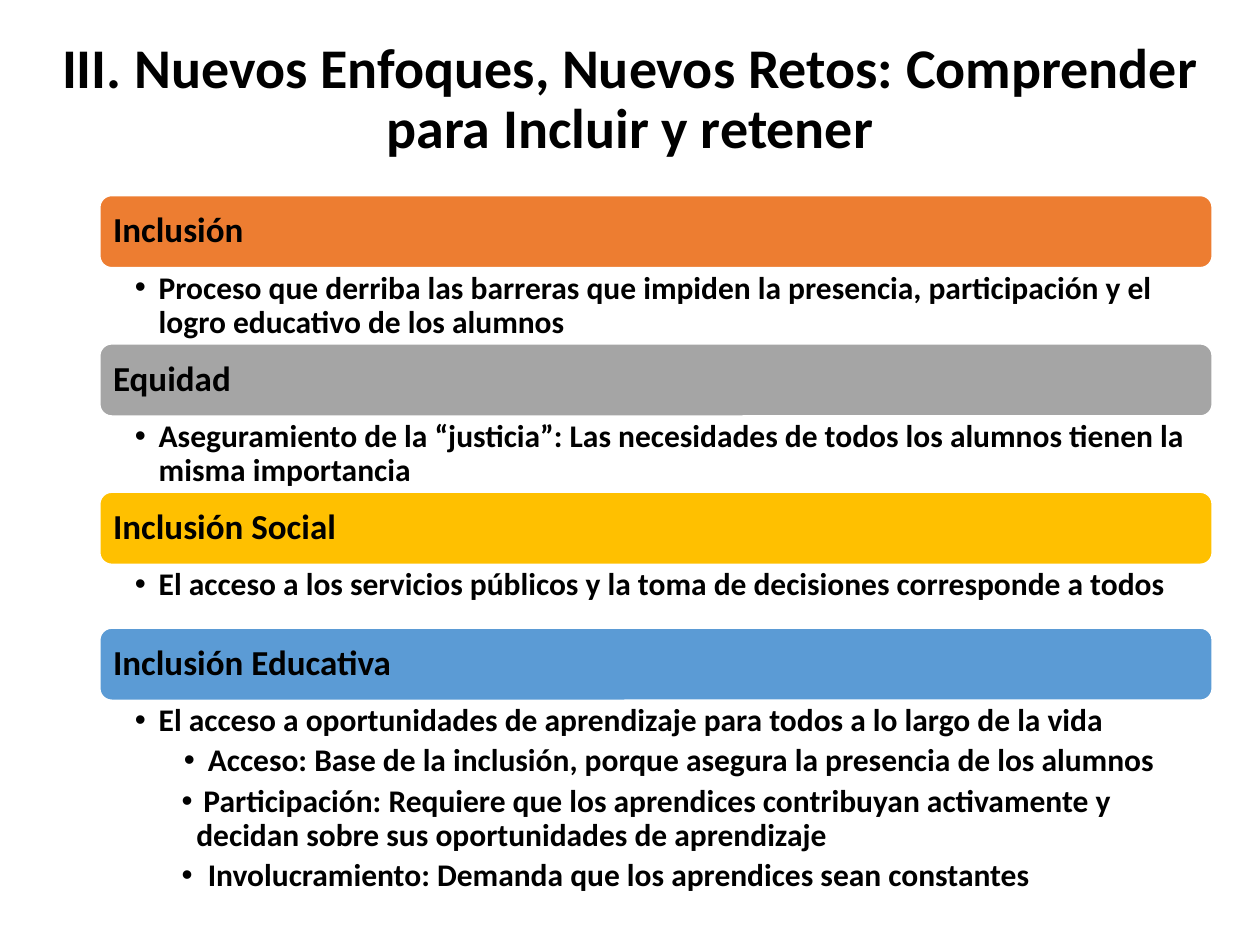
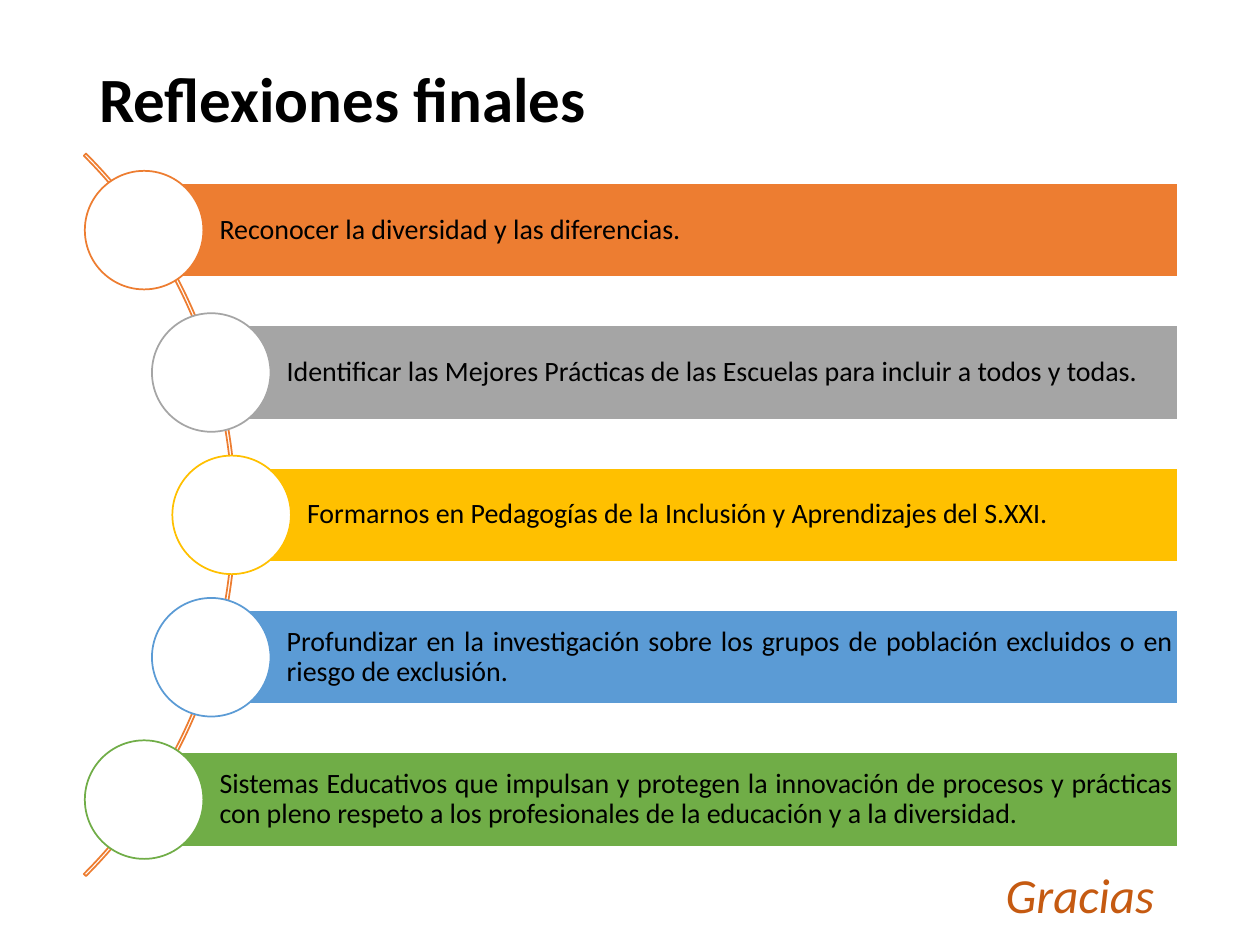
from dataclasses import dataclass
from math import sqrt

from lxml.etree import SubElement
from pptx import Presentation
from pptx.dml.color import RGBColor
from pptx.enum.shapes import MSO_SHAPE as Preset
from pptx.enum.text import MSO_ANCHOR as Anchor, PP_ALIGN as Align
from pptx.oxml.ns import qn
from pptx.shapes.autoshape import Shape
from pptx.slide import Slide
from pptx.util import Cm, Pt

FONT = "Calibri"
COLORS = {
    "black": "000000", "white": "FFFFFF", "orange": "ED7D31", "gray": "A5A5A5",
    "gold": "FFC000", "blue": "5B9BD5", "green": "70AD47", "rust": "C55A11",
}


@dataclass(frozen=True)
class Box:
    left: float
    top: float
    width: float
    height: float

    def lengths(self) -> tuple:
        return Cm(self.left), Cm(self.top), Cm(self.width), Cm(self.height)


@dataclass(frozen=True)
class TextStyle:
    size: float
    bold: bool = False
    italic: bool = False
    color: str = "black"
    align: Align = Align.LEFT
    anchor: Anchor = Anchor.MIDDLE
    insets: tuple = (0.25, 0.13, 0.25, 0.13)  # left, top, right, bottom
    line_spacing: float = 0.9
    space_after: float = 0


@dataclass(frozen=True)
class Point:
    text: str
    level: int = 1
    margin: float = 0.48
    hanging: float = 0.48


@dataclass(frozen=True)
class Concept:
    name: str
    color: str
    body_height: float
    points: tuple


@dataclass(frozen=True)
class Reflection:
    text: str
    color: str


# Text styles
CONCEPT_NAME = TextStyle(20, bold=True, insets=(0.2,) * 4)
CONCEPT_BODY = TextStyle(18, bold=True, anchor=Anchor.TOP, space_after=3.6,
                         insets=(0.71, 0.08, 0.36, 0.08))
REFLECTION = TextStyle(16, align=Align.JUSTIFY, insets=(1.52, 0.1, 0.1, 0.1))
THANKS = TextStyle(28, italic=True, color="rust", align=Align.CENTER,
                   anchor=Anchor.TOP, line_spacing=1.0)

# Content
CONCEPTS = (
    Concept("Inclusión", "orange", 1.53, (
        Point("Proceso que derriba las barreras que impiden la presencia, "
              "participación y el logro educativo de los alumnos"),)),
    Concept("Equidad", "gray", 1.53, (
        Point("Aseguramiento de la “justicia”: Las necesidades de todos los "
              "alumnos tienen la misma importancia"),)),
    Concept("Inclusión Social", "gold", 1.28, (
        Point("El acceso a los servicios públicos y la toma de decisiones "
              "corresponde a todos"),)),
    Concept("Inclusión Educativa", "blue", 4.11, (
        Point("El acceso a oportunidades de aprendizaje para todos a lo largo de la vida"),
        Point("Acceso: Base de la inclusión, porque asegura la presencia de los alumnos",
              2, 1.47, 0.48),
        Point(" Participación: Requiere que los aprendices contribuyan activamente y "
              "decidan sobre sus oportunidades de aprendizaje", 2, 1.24, 0.3),
        Point("Involucramiento: Demanda que los aprendices sean constantes",
              2, 1.47, 0.53))),
)
REFLECTIONS = (
    Reflection("Reconocer la diversidad y las diferencias.", "orange"),
    Reflection("Identificar las Mejores Prácticas de las Escuelas para incluir "
               "a todos y todas.", "gray"),
    Reflection("Formarnos en Pedagogías de la Inclusión y Aprendizajes del S.XXI.", "gold"),
    Reflection("Profundizar en la investigación sobre los grupos de población "
               "excluidos o en riesgo de exclusión.", "blue"),
    Reflection("Sistemas Educativos que impulsan y protegen la innovación de procesos "
               "y prácticas con pleno respeto a los profesionales de la educación y a "
               "la diversidad.", "green"),
)


def rgb(name: str) -> RGBColor:
    return RGBColor.from_string(COLORS[name])


def add_bullet(paragraph, point: Point) -> None:
    paragraph.level = point.level
    properties = paragraph._p.get_or_add_pPr()
    for key, value in {"marL": Cm(point.margin), "indent": -Cm(point.hanging)}.items():
        properties.set(key, str(int(value)))
    SubElement(properties, qn("a:buFont")).set("typeface", "Arial")
    SubElement(properties, qn("a:buChar")).set("char", "•")


def write(shape: Shape, lines: tuple, style: TextStyle) -> None:
    """Fill a shape with plain strings or bulleted points."""
    frame = shape.text_frame
    left, top, right, bottom = (Cm(inset) for inset in style.insets)
    frame_format = {
        "word_wrap": True, "vertical_anchor": style.anchor, "margin_left": left,
        "margin_top": top, "margin_right": right, "margin_bottom": bottom,
    }
    for key, value in frame_format.items():
        setattr(frame, key, value)
    for index, line in enumerate(lines):
        paragraph = frame.add_paragraph() if index else frame.paragraphs[0]
        paragraph_format = {"alignment": style.align, "line_spacing": style.line_spacing,
                            "space_after": Pt(style.space_after)}
        for key, value in paragraph_format.items():
            setattr(paragraph, key, value)
        if isinstance(line, Point):
            add_bullet(paragraph, line)
        run = paragraph.add_run()
        run.text = line.text if isinstance(line, Point) else line
        font_format = {"name": FONT, "size": Pt(style.size),
                       "bold": style.bold, "italic": style.italic}
        for key, value in font_format.items():
            setattr(run.font, key, value)
        run.font.color.rgb = rgb(style.color)


def add_text(slide: Slide, box: Box, lines: tuple, style: TextStyle) -> None:
    write(slide.shapes.add_textbox(*box.lengths()), lines, style)


def add_title(slide: Slide, box: Box, text: str, size: float, align: Align) -> None:
    add_text(slide, box, (text,), TextStyle(size, bold=True, align=align))


def add_preset(slide: Slide, preset: Preset, box: Box, fill: str | None, line: str) -> Shape:
    shape = slide.shapes.add_shape(preset, *box.lengths())
    shape.shadow.inherit = False
    if fill:
        shape.fill.solid()
        shape.fill.fore_color.rgb = rgb(fill)
    else:
        shape.fill.background()
    shape.line.color.rgb = rgb(line)
    shape.line.width = Pt(1)
    return shape


def build_concepts(slide: Slide) -> None:
    add_title(slide, Box(0.97, 0.76, 23.47, 2.52),
              "III. Nuevos Enfoques, Nuevos Retos: Comprender para Incluir y retener",
              32, Align.CENTER)
    # Each heading bar is followed directly by its bulleted body
    left, width, bar_height, top = 2.01, 22.43, 1.46, 3.94
    for concept in CONCEPTS:
        bar = add_preset(slide, Preset.ROUNDED_RECTANGLE,
                         Box(left, top, width, bar_height), concept.color, "white")
        write(bar, (concept.name,), CONCEPT_NAME)
        top += bar_height
        add_text(slide, Box(left, top, width, concept.body_height),
                 concept.points, CONCEPT_BODY)
        top += concept.body_height


def build_reflections(slide: Slide) -> None:
    add_title(slide, Box(1.75, 1.02, 21.9, 2.08), "Reflexiones finales", 36, Align.LEFT)
    add_text(slide, Box(18.52, 17.3, 6.5, 1.45), ("Gracias",), THANKS)

    # Thin arc that carries the circles
    arc_x, arc_y, arc_size = -5.55, 10.38, 20.6
    arc = add_preset(slide, Preset.BLOCK_ARC,
                     Box(arc_x - arc_size / 2, arc_y - arc_size / 2, arc_size, arc_size),
                     None, "orange")
    for index, value in enumerate((189, 27, 0.003)):
        arc.adjustments[index] = value

    # Bars start at the circle centres, which lie on the arc
    radius, pitch, bar_height, bar_right, circle = 10.22, 2.87, 1.9, 23.75, 2.39
    for row, reflection in enumerate(REFLECTIONS):
        offset = (row - (len(REFLECTIONS) - 1) / 2) * pitch
        x, y = arc_x + sqrt(radius ** 2 - offset ** 2), arc_y + offset
        bar = add_preset(slide, Preset.RECTANGLE,
                         Box(x, y - bar_height / 2, bar_right - x, bar_height),
                         reflection.color, "white")
        write(bar, (reflection.text,), REFLECTION)
        add_preset(slide, Preset.OVAL, Box(x - circle / 2, y - circle / 2, circle, circle),
                   "white", reflection.color)


def main() -> None:
    deck = Presentation()
    deck.slide_width, deck.slide_height = Cm(25.4), Cm(19.05)
    blank = deck.slide_layouts[6]
    for build in (build_concepts, build_reflections):
        build(deck.slides.add_slide(blank))
    deck.save("out.pptx")


if __name__ == "__main__":
    main()
